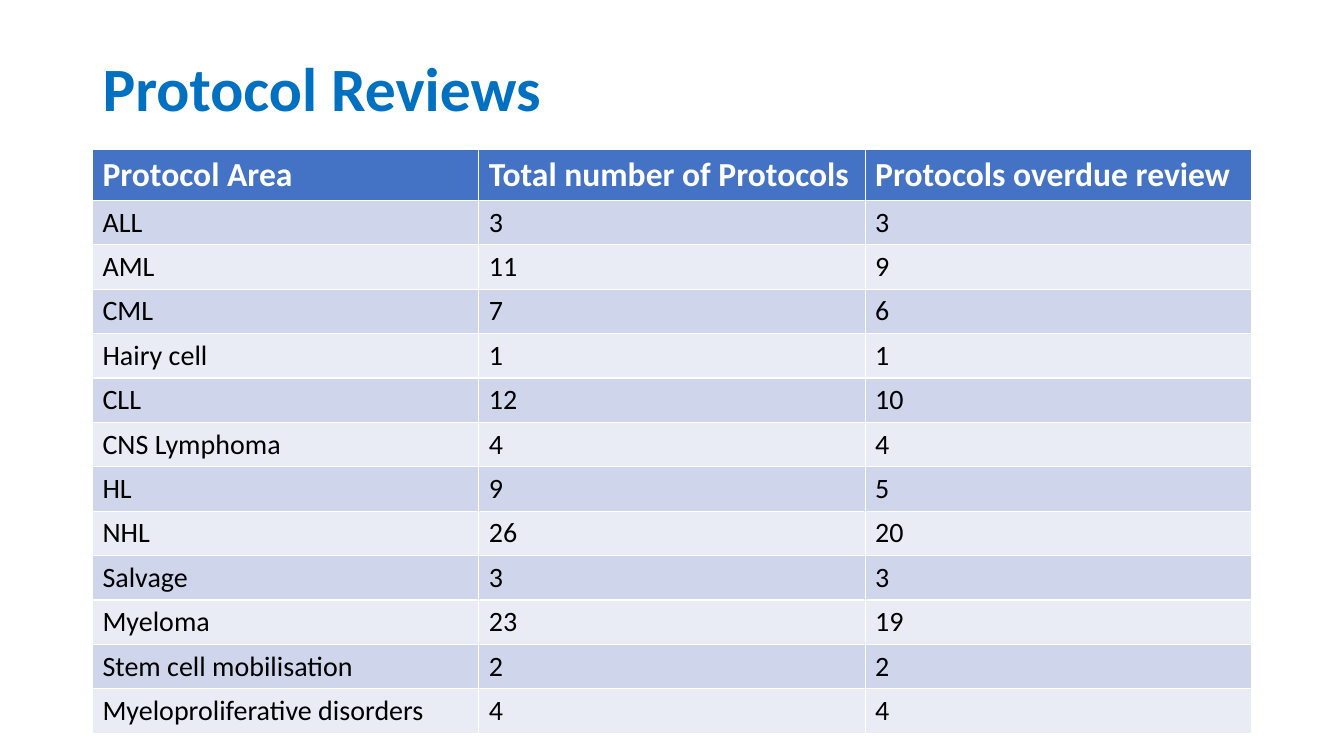
from pptx import Presentation
from pptx.dml.color import RGBColor
from pptx.enum import text as t
from pptx.util import Cm, Pt

THEME = {
    "title": {"name": "Calibri", "size": Pt(44), "bold": True, "color": "0070C0"},
    "header": {"name": "Calibri", "size": Pt(24), "bold": True, "color": "FFFFFF"},
    "body": {"name": "Calibri", "size": Pt(20), "bold": False, "color": "000000"},
    "header_fill": "4472C4",
    "band_fills": ("CFD5EA", "E9EBF5"),
}

REVIEWS = [
    ("Protocol Area", "Total number of Protocols", "Protocols overdue review"),
    ("ALL", 3, 3),
    ("AML", 11, 9),
    ("CML", 7, 6),
    ("Hairy cell", 1, 1),
    ("CLL", 12, 10),
    ("CNS Lymphoma", 4, 4),
    ("HL", 9, 5),
    ("NHL", 26, 20),
    ("Salvage", 3, 3),
    ("Myeloma", 23, 19),
    ("Stem cell mobilisation", 2, 2),
    ("Myeloproliferative disorders", 4, 4),
]
LEFT, WIDTH = Cm(2.33), Cm(29.21)
ROW_HEIGHT = Cm(1.04)


def write(frame, content, style):
    """Put one formatted paragraph into a text frame."""
    paragraph = frame.paragraphs[0]
    run = paragraph.add_run()
    run.text = str(content)
    for key, value in THEME[style].items():
        if key == "color":
            run.font.color.rgb = RGBColor.from_string(value)
        else:
            setattr(run.font, key, value)
    return paragraph


# Slide
prs = Presentation()
prs.slide_width, prs.slide_height = Cm(33.87), Cm(19.05)
slide = prs.slides.add_slide(prs.slide_layouts[5])

# Title
heading = slide.shapes.title
position = {"left": LEFT, "top": Cm(0.46), "width": WIDTH, "height": Cm(3.68)}
for key, value in position.items():
    setattr(heading, key, value)
heading.text_frame.vertical_anchor = t.MSO_ANCHOR.MIDDLE
heading_line = write(heading.text_frame, "Protocol Reviews", "title")
heading_line.alignment = t.PP_ALIGN.LEFT
heading_line.line_spacing = 0.9

# Review table: the default table style supplies the white rules
reviews = slide.shapes.add_table(
    len(REVIEWS), len(REVIEWS[0]), LEFT, Cm(3.76), WIDTH, ROW_HEIGHT * len(REVIEWS)
).table
for r, record in enumerate(REVIEWS):
    style = "body" if r else "header"
    fill = THEME["band_fills"][(r - 1) % 2] if r else THEME["header_fill"]
    for c, value in enumerate(record):
        cell = reviews.cell(r, c)
        cell.fill.solid()
        cell.fill.fore_color.rgb = RGBColor.from_string(fill)
        write(cell.text_frame, value, style)

prs.save("out.pptx")
